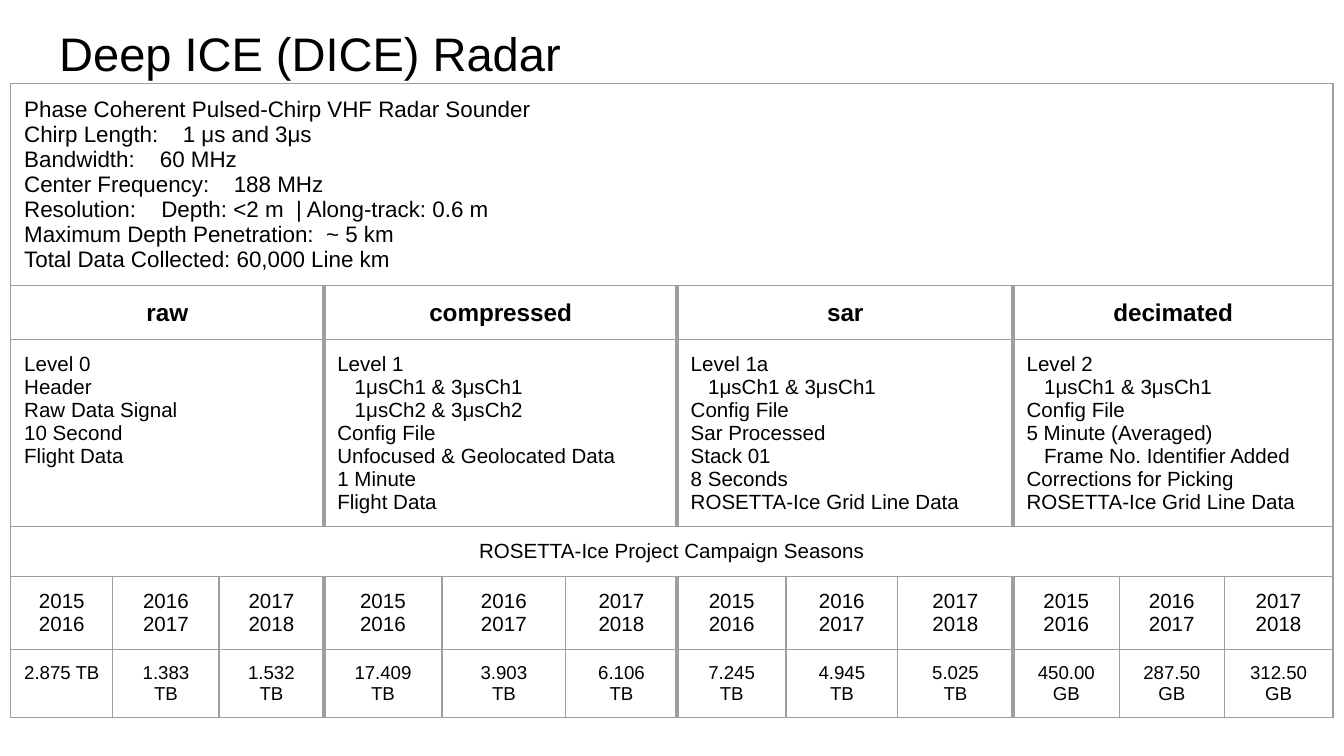
import pptx
import pptx.dml.color
import pptx.enum.text
import pptx.oxml.ns
import pptx.util
from lxml import etree

In, Pt = pptx.util.Inches, pptx.util.Pt
LEFT, CENTER = pptx.enum.text.PP_ALIGN.LEFT, pptx.enum.text.PP_ALIGN.CENTER
COLS = [0.76, 0.79, 0.78, 0.88, 0.92, 0.83, 0.81, 0.83, 0.86, 0.79, 0.78, 0.81]
ROWS = [1.42, 0.32, 1.32, 0.35, 0.48, 0.47]
GROUP = 3  # seasons per data product
INK, RULE = "000000", "9E9E9E"
THIN, THICK = 0.75, 2.25

# Each paragraph with the tab stop that its value starts at
SPECS = {
    "Phase Coherent Pulsed-Chirp VHF Radar Sounder\vChirp Length:\t1 μs and 3μs": 1.18,
    "Bandwidth:\t60 MHz": 1.01,
    "Center Frequency:\t188 MHz": 1.56,
    "Resolution:\tDepth: <2 m  | Along-track: 0.6 m": 1.02,
    "Maximum Depth Penetration:  ~ 5 km\vTotal Data Collected: 60,000 Line km": None,
}

# A leading ">" marks an indented line
PRODUCTS = {
    "raw": "Level 0\nHeader\nRaw Data Signal\n10 Second\nFlight Data",
    "compressed": "Level 1\n>1μsCh1 & 3μsCh1\n>1μsCh2 & 3μsCh2\nConfig File\n"
                  "Unfocused & Geolocated Data\n1 Minute\nFlight Data",
    "sar": "Level 1a\n>1μsCh1 & 3μsCh1\nConfig File\nSar Processed\nStack 01\n"
           "8 Seconds\nROSETTA-Ice Grid Line Data",
    "decimated": "Level 2\n>1μsCh1 & 3μsCh1\nConfig File\n5 Minute (Averaged)\n"
                 ">Frame No. Identifier Added\nCorrections for Picking\n"
                 "ROSETTA-Ice Grid Line Data",
}
SEASONS = ["2015\v2016", "2016\v2017", "2017\v2018"]
VOLUMES = ["2.875 TB", "1.383\vTB", "1.532\vTB", "17.409\vTB", "3.903\vTB", "6.106\vTB",
           "7.245\vTB", "4.945\vTB", "5.025\vTB", "450.00\vGB", "287.50 GB", "312.50\vGB"]


def rgb(color):
    return pptx.dml.color.RGBColor.from_string(color)


def add_xml(parent, tag, **attrs):
    return etree.SubElement(parent, pptx.oxml.ns.qn(tag), attrs)


def format_runs(p, size, bold=False):
    for r in p.runs:
        r.font.name, r.font.size, r.font.bold = "Arial", Pt(size), bold
        r.font.color.rgb = rgb(INK)


def set_borders(cell, **widths):
    for side, width in widths.items():
        ln = add_xml(cell._tc.get_or_add_tcPr(), "a:ln" + side, w=str(Pt(width)))
        add_xml(add_xml(ln, "a:solidFill"), "a:srgbClr", val=RULE)


def fill_cell(table, row, col, span, text, size, align=LEFT, bold=False):
    cell = table.cell(row, col)
    end = col + span
    if span > 1:
        cell.merge(table.cell(row, end - 1))
    # Thick rules part the products
    whole = span == len(COLS)
    left = THICK if not whole and col and col % GROUP == 0 else THIN
    right = THICK if not whole and end < len(COLS) and end % GROUP == 0 else THIN
    set_borders(cell, L=left, R=right, T=THIN, B=THIN)
    cell.fill.background()
    cell.margin_left = cell.margin_right = In(0.1)
    cell.margin_top = cell.margin_bottom = In(0.1)
    cell.text_frame.text = text.replace(">", "")
    for p, line in zip(cell.text_frame.paragraphs, text.split("\n")):
        p.alignment = align
        if line.startswith(">"):
            p._p.get_or_add_pPr().set("marL", str(In(0.13)))
        format_runs(p, size, bold)
    return cell


def add_tabs(cell, stops):
    for p, pos in zip(cell.text_frame.paragraphs, stops):
        if pos:
            tabs = add_xml(p._p.get_or_add_pPr(), "a:tabLst")
            add_xml(tabs, "a:tab", pos=str(In(pos)), algn="l")


def add_title(s, text):
    sp = s.shapes.title
    sp.left, sp.top, sp.width, sp.height = In(0.34), In(0.08), In(9.32), In(0.63)
    tf = sp.text_frame
    tf.text = text
    tf.auto_size = pptx.enum.text.MSO_AUTO_SIZE.NONE
    tf.vertical_anchor = pptx.enum.text.MSO_ANCHOR.MIDDLE
    tf.margin_left = tf.margin_right = tf.margin_top = tf.margin_bottom = In(0.1)
    tf.paragraphs[0].alignment = LEFT
    format_runs(tf.paragraphs[0], 25.2)


def add_grid(s):
    table = s.shapes.add_table(len(ROWS), len(COLS), In(0.08), In(0.62),
                               In(sum(COLS)), In(sum(ROWS))).table
    table.first_row = table.horz_banding = False
    for column, width in zip(table.columns, COLS):
        column.width = In(width)
    for row, height in zip(table.rows, ROWS):
        row.height = In(height)
    return table


def main():
    prs = pptx.Presentation()
    prs.slide_width, prs.slide_height = In(10), In(10) * 9 // 16
    s = prs.slides.add_slide(prs.slide_layouts[5])
    add_title(s, "Deep ICE (DICE) Radar")
    table = add_grid(s)

    # Radar specifications
    specs = fill_cell(table, 0, 0, len(COLS), "\n".join(SPECS), 12)
    add_tabs(specs, SPECS.values())

    # Data products
    for i, (name, details) in enumerate(PRODUCTS.items()):
        fill_cell(table, 1, i * GROUP, GROUP, name, 13, CENTER, True)
        fill_cell(table, 2, i * GROUP, GROUP, details, 11)

    # Campaign seasons and data volumes
    fill_cell(table, 3, 0, len(COLS), "ROSETTA-Ice Project Campaign Seasons", 11, CENTER)
    for col, volume in enumerate(VOLUMES):
        fill_cell(table, 4, col, 1, SEASONS[col % GROUP], 11, CENTER)
        fill_cell(table, 5, col, 1, volume, 10, CENTER)

    prs.save("out.pptx")


if __name__ == "__main__":
    main()
